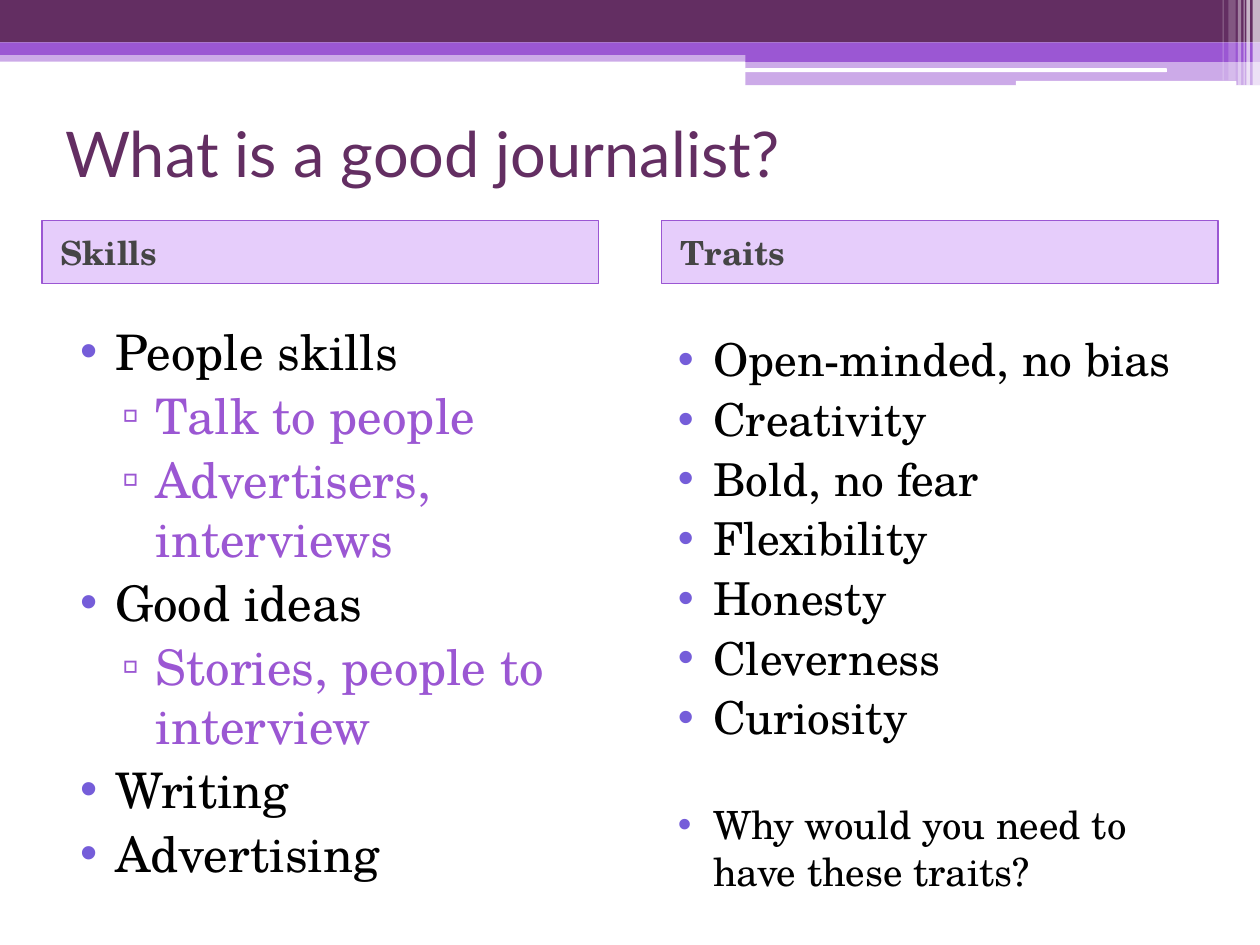
from pptx import Presentation
from pptx.util import Pt
from pptx.dml.color import RGBColor
from pptx.enum.shapes import MSO_SHAPE as Kind
from pptx.enum.text import MSO_ANCHOR as Anchor, MSO_AUTO_SIZE as Fit, PP_ALIGN as Align
from pptx.oxml.ns import qn
from lxml.etree import SubElement as sub

PLUM, PURPLE, WHITE = "632E62", "9B57D3", "FFFFFF"
SERIF = "TeX Gyre Schola"
TITLE = "What is a good journalist?"
HEADS = [("Skills", 23.8), ("Traits", 378)]
SKILLS = [
    (0, "People skills"),
    (1, "Talk to people"),
    (1, "Advertisers, interviews"),
    (0, "Good ideas"),
    (1, "Stories, people to interview"),
    (0, "Writing"),
    (0, "Advertising"),
]
TRAITS = ["Open-minded, no bias", "Creativity", "Bold, no fear", "Flexibility",
          "Honesty", "Cleverness", "Curiosity"]
ASK = "Why would you need to have these traits?"
LEVELS = [
    {"left": 28.8, "hang": -20.2, "mark": "•", "tint": "755DD9", "color": "000000"},
    {"left": 51.8, "hang": -19.4, "mark": "▫", "tint": PURPLE, "color": PURPLE},
]
BARS = [
    (0, 28.8, 720, 6.5, PURPLE, 50),
    (0, 0, 720, 24.2, PLUM, 100),
    (0, 24.2, 720, 7.2, PURPLE, 100),
    (426, 28, 294, 7.4, PURPLE, 100),
    (426, 35, 294, 13.7, PURPLE, 50),
]
PILLS = [(425.6, 39, 241.2, 2.2), (580.5, 46.2, 126, 2.8)]
STRIPES = [
    (715.8, 4.2, 49, 65), (712.2, 2, 49, 65), (710.6, 0.7, 49, 60),
    (707.3, 2, 49, 40), (702, 4.2, 46, 20), (698.6, 0.7, 46, 30),
]


def rgb(code):
    return RGBColor.from_string(code)


def paint(shape, code, alpha=100):
    shape.fill.solid()
    shape.fill.fore_color.rgb = rgb(code)
    if alpha < 100:
        node = shape.element.spPr.find(qn("a:solidFill"))[0]
        sub(node, qn("a:alpha"), val=str(alpha * 1000))


def place(shape, *box):
    for name, size in zip(("left", "top", "width", "height"), box):
        setattr(shape, name, Pt(size))


def bar(shapes, kind, box, code, alpha=100):
    shape = shapes.add_shape(kind, *map(Pt, box))
    shape.shadow.inherit = False
    shape.line.fill.background()
    paint(shape, code, alpha)


def frame(holder, anchor):
    text = holder.text_frame
    looks = {"word_wrap": True, "auto_size": Fit.NONE, "vertical_anchor": anchor}
    for name, value in looks.items():
        setattr(text, name, value)
    return text


def write(para, text, size, color, font=SERIF, bold=False, before=3):
    looks = {"alignment": Align.LEFT, "space_before": Pt(before),
             "space_after": Pt(0), "line_spacing": 1.0}
    for name, value in looks.items():
        setattr(para, name, value)
    run = para.add_run()
    run.text = text
    for name, value in {"size": Pt(size), "name": font, "bold": bold}.items():
        setattr(run.font, name, value)
    run.font.color.rgb = rgb(color)


def indent(para, left, hang):
    props = para._p.get_or_add_pPr()
    props.set("marL", str(Pt(left)))
    props.set("indent", str(Pt(hang)))
    return props


def fill_list(holder, items):
    text = frame(holder, Anchor.TOP)
    for i, (depth, words, size, before) in enumerate(items):
        para = text.add_paragraph() if i else text.paragraphs[0]
        style = LEVELS[depth]
        para.level = depth
        write(para, words, size, style["color"], before=before)
        props = indent(para, style["left"], style["hang"])
        tint = sub(props, qn("a:buClr"))
        sub(tint, qn("a:srgbClr"), val=style["tint"])
        sub(props, qn("a:buFont"), typeface="Arial")
        sub(props, qn("a:buChar"), char=style["mark"])


def main():
    deck = Presentation()
    deck.slide_width, deck.slide_height = Pt(720), Pt(540)
    slide = deck.slides.add_slide(deck.slide_layouts[4])
    shapes = slide.shapes
    title, head_a, list_a, head_b, list_b = holders = list(slide.placeholders)

    for *box, code, alpha in BARS:
        bar(shapes, Kind.RECTANGLE, box, code, alpha)
    for box in PILLS:
        bar(shapes, Kind.ROUNDED_RECTANGLE, box, WHITE)
    for left, wide, high, alpha in STRIPES:
        bar(shapes, Kind.RECTANGLE, (left, 0, wide, high), WHITE, alpha)
    tree = title.element.getparent()
    for holder in (title, head_a, head_b, list_a, list_b):
        tree.append(holder.element)

    place(title, 30, 66.2, 690, 41.8)
    write(frame(title, Anchor.MIDDLE).paragraphs[0], TITLE, 36, PLUM, "Lato", before=0)

    for holder, (words, left) in zip((head_a, head_b), HEADS):
        place(holder, left, 126, 318.2, 36)
        paint(holder, "9E38F2", 25)
        holder.line.color.rgb = rgb(PURPLE)
        holder.line.width = Pt(1)
        para = frame(holder, Anchor.MIDDLE).paragraphs[0]
        write(para, words, 19, "454545", bold=True)
        indent(para, 3.6, 0)

    place(list_a, 30, 180, 318.2, 339)
    fill_list(list_a, [(depth, words, 28, 3) for depth, words in SKILLS])
    place(list_b, 371.5, 185.8, 318.2, 333.4)
    fill_list(list_b, [(0, words, 25.9, 3) for words in TRAITS] + [(0, ASK, 22.2, 32.6)])
    deck.save("out.pptx")


if __name__ == "__main__":
    main()
